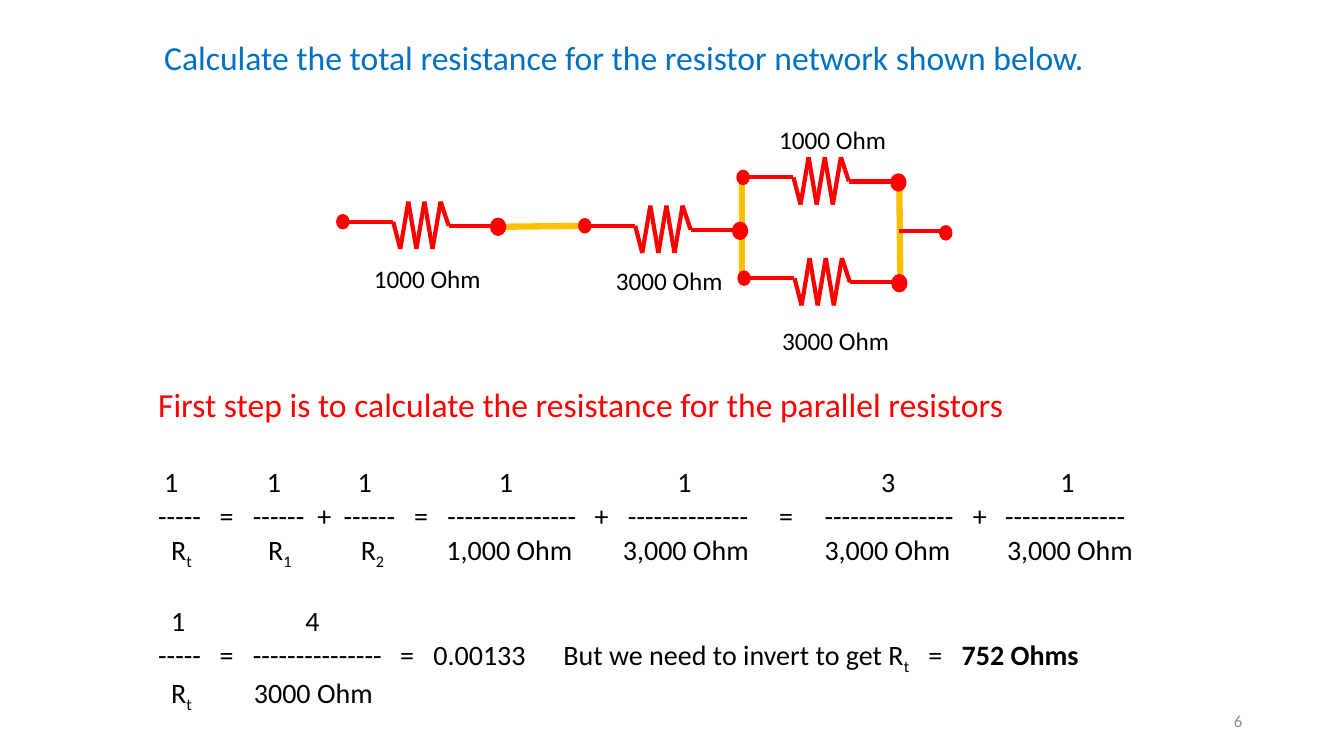
from itertools import pairwise

from lxml import etree
from pptx import Presentation
from pptx.dml.color import RGBColor
from pptx.enum.shapes import MSO_CONNECTOR, MSO_SHAPE
from pptx.enum.text import MSO_ANCHOR, PP_ALIGN
from pptx.oxml.ns import qn
from pptx.util import Emu, Pt

STRAIGHT = MSO_CONNECTOR.STRAIGHT
OVAL = MSO_SHAPE.OVAL
TOP, MIDDLE = MSO_ANCHOR.TOP, MSO_ANCHOR.MIDDLE
LEFT, RIGHT = PP_ALIGN.LEFT, PP_ALIGN.RIGHT

RED = RGBColor(0xFF, 0x00, 0x00)
AMBER = RGBColor(0xFF, 0xC0, 0x00)
BLUE = RGBColor(0x00, 0x70, 0xC0)
BLACK = RGBColor(0x00, 0x00, 0x00)
GRAY = RGBColor(0x8C, 0x8C, 0x8C)

PX = 9144
ZIGZAG = [(12, 7), (56, 7), (63, 34), (71, -13), (79, 34), (87, -13),
          (95, 34), (103, -13), (111, 11), (154, 11)]

WIRES = [(893, 283, 892, 183), (736, 272, 736, 182), (494, 225, 586, 224)]
RESISTORS = [(731, 169), (732, 269), (334, 213), (574, 217)]
LABELS = [("1000 Ohm", 763, 118), ("3000 Ohm", 766, 318),
          ("1000 Ohm", 361, 256), ("3000 Ohm", 601, 258)]

EQUATIONS = [
    (29, [(6, "1"), (108, "1"), (198, "1"), (338, "1"), (515, "1"),
          (717, "3"), (895, "1")]),
    (0, [(0, "-" * 5), (61, "="), (94, "-" * 6), (158, "+"), (184, "-" * 6),
         (254, "="), (287, "-" * 15), (433, "+"), (466, "-" * 14),
         (616, "="), (661, "-" * 15), (808, "+"), (840, "-" * 14)]),
    (0, [(13, "R_t"), (109, "R_1"), (201, "R_2"), (286, "1,000 Ohm"),
         (461, "3,000 Ohm"), (661, "3,000 Ohm"), (842, "3,000 Ohm")]),
    (24, [(13, "1"), (146, "4")]),
    (0, [(0, "-" * 5), (61, "="), (94, "-" * 15), (240, "="),
         (273, "0.00133"), (402, "But we need to invert to get R_t"),
         (764, "="), (797, "752 Ohms")]),
    (0, [(13, "R_t"), (95, "3000 Ohm")]),
]


class SlideBuilder:
    """Draws styled elements on one slide, with lengths in px."""

    def __init__(self, slide, font="Calibri"):
        self.slide = slide
        self.font = font

    def style(self, r, size, color):
        r.font.name = self.font
        r.font.size = Pt(size)
        r.font.color.rgb = color

    def text(self, text, x, y, w, h, size, color, align=LEFT, anchor=TOP):
        sp = self.slide.shapes.add_textbox(*(Emu(v * PX) for v in (x, y, w, h)))
        tf = sp.text_frame
        tf.word_wrap = True
        tf.vertical_anchor = anchor
        tf.text = text
        p = tf.paragraphs[0]
        p.alignment = align
        self.style(p.runs[0], size, color)
        return tf

    def line(self, x1, y1, x2, y2, color=RED, width=3):
        ln = self.slide.shapes.add_connector(
            STRAIGHT, *(Emu(v * PX) for v in (x1, y1, x2, y2)))
        ln.line.color.rgb = color
        ln.line.width = Pt(width)
        etree.SubElement(ln._element.spPr, qn("a:effectLst"))

    def dot(self, x, y, width=1):
        sp = self.slide.shapes.add_shape(
            OVAL, *(Emu(v * PX) for v in (x, y, 12, 14)))
        sp.shadow.inherit = False
        sp.fill.solid()
        sp.fill.fore_color.rgb = RED
        sp.line.color.rgb = RED
        sp.line.width = Pt(width)

    def resistor(self, x, y):
        for (x1, y1), (x2, y2) in pairwise(ZIGZAG):
            self.line(x + x1, y + y1, x + x2, y + y2)
        self.dot(x + 154, y + 5, 3)
        self.dot(x, y)

    def run(self, p, text, size, subscript=False):
        r = p.add_run()
        r.text = text
        self.style(r, size, BLACK)
        if subscript:
            r._r.get_or_add_rPr().set("baseline", "-25000")

    def equation_row(self, tf, gap, cells, size=20):
        p = tf.add_paragraph()
        p.space_before = Pt(gap)
        tabs = etree.SubElement(p._p.get_or_add_pPr(), qn("a:tabLst"))
        for x, text in cells:
            if x:
                etree.SubElement(tabs, qn("a:tab"), pos=str(x * PX), algn="l")
                text = "\t" + text
            base, _, subscript = text.partition("_")
            self.run(p, base, size)
            if subscript:
                self.run(p, subscript, size, True)
        return p


def main():
    prs = Presentation()
    prs.slide_width, prs.slide_height = Emu(1333 * PX), Emu(750 * PX)
    s = SlideBuilder(prs.slides.add_slide(prs.slide_layouts[6]))

    s.text("6", 942, 695, 300, 40, 12, GRAY, RIGHT, MIDDLE)
    for wire in WIRES:
        s.line(*wire, AMBER, 4.5)
    for x, y in RESISTORS:
        s.resistor(x, y)
    for label, x, y in LABELS:
        s.text(label, x, y, 153, 40, 18, BLACK)
    s.line(892, 229, 936, 229)
    s.dot(932, 224)

    s.text("Calculate the total resistance for the resistor network shown below.",
           153, 32, 971, 50, 24, BLUE)
    tf = s.text("First step is to calculate the resistance for the parallel resistors",
                147, 376, 1044, 333, 24, RED)
    rows = [s.equation_row(tf, gap, cells) for gap, cells in EQUATIONS]
    rows[4].runs[-1].font.bold = True

    prs.save("out.pptx")


if __name__ == "__main__":
    main()
